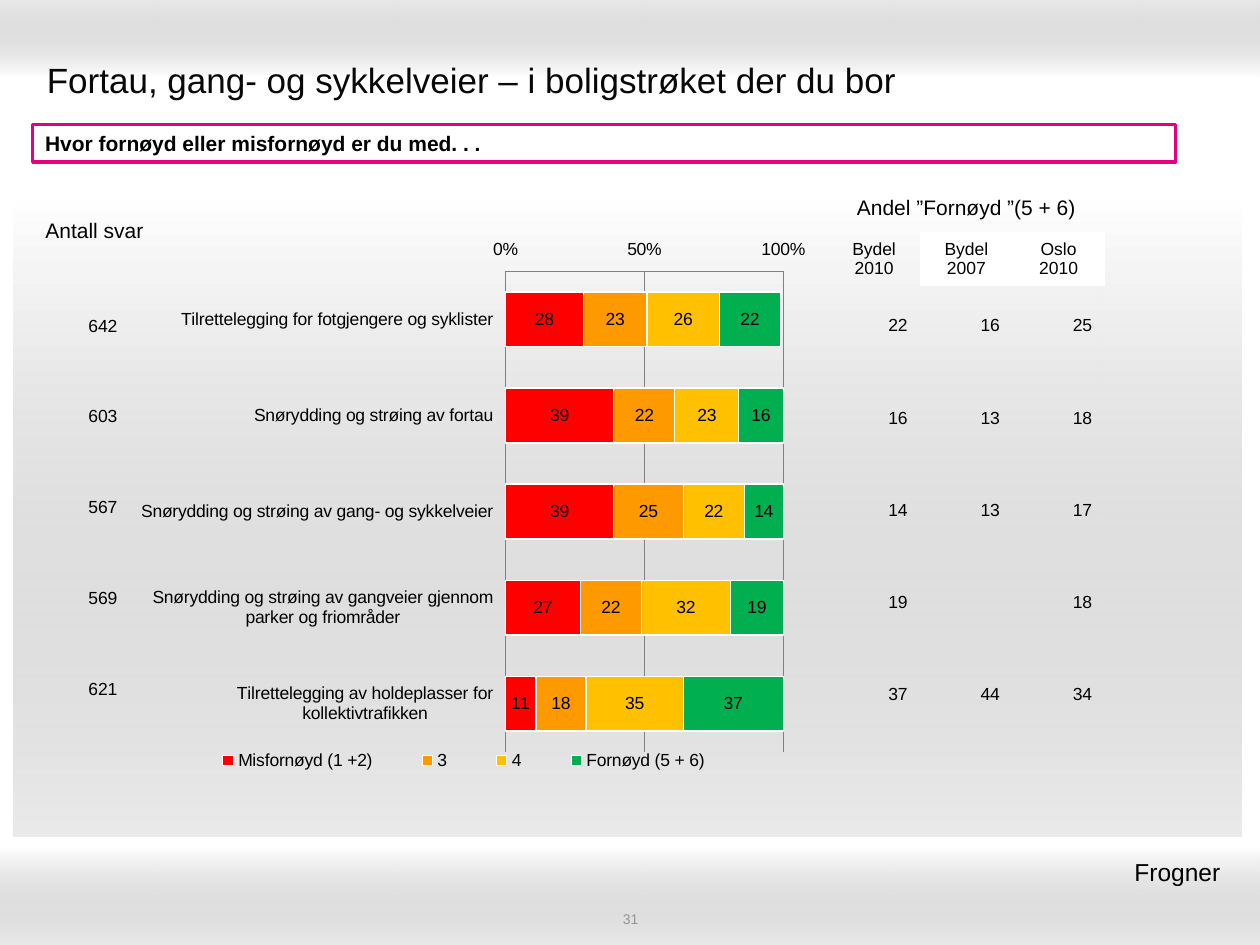
from dataclasses import dataclass

from lxml import etree
from pptx import Presentation
from pptx.chart.data import CategoryChartData
from pptx.dml.color import RGBColor
from pptx.enum.chart import XL_CHART_TYPE, XL_LEGEND_POSITION, XL_TICK_LABEL_POSITION, XL_TICK_MARK
from pptx.enum.shapes import MSO_SHAPE
from pptx.enum.text import MSO_ANCHOR, PP_ALIGN
from pptx.oxml.ns import qn
from pptx.util import Cm, Pt

RECT = MSO_SHAPE.RECTANGLE
LEFT, CENTER, RIGHT = PP_ALIGN.LEFT, PP_ALIGN.CENTER, PP_ALIGN.RIGHT
TOP, MIDDLE = MSO_ANCHOR.TOP, MSO_ANCHOR.MIDDLE
NO_TICKS, TICKS_INSIDE = XL_TICK_MARK.NONE, XL_TICK_MARK.INSIDE
LABELS_LOW = XL_TICK_LABEL_POSITION.LOW
BAR_STACKED = XL_CHART_TYPE.BAR_STACKED
LEGEND_BOTTOM = XL_LEGEND_POSITION.BOTTOM

FONT = "Arial"
PLAIN_TABLE_STYLE = "{2D5ABB26-0587-4C30-8999-92F81FD0307C}"
COLORS = {
    "white": "FFFFFF", "black": "000000", "title": "080808", "number": "969696",
    "band": "999999", "frame": "E7007E", "axis": "808080",
    "dissatisfied": "FF0000", "three": "FF9900", "four": "FFC000", "satisfied": "00B050",
}


@dataclass
class Box:
    left: float
    top: float
    width: float
    height: float

    def lengths(self) -> list:
        return [Cm(v) for v in (self.left, self.top, self.width, self.height)]


@dataclass
class Band:
    box: Box
    angle: int  # counter-clockwise


@dataclass
class Answer:
    name: str
    color: str
    values: tuple


@dataclass
class Grid:
    left: float
    top: float
    col_width: float
    row_heights: list
    rows: list
    align: PP_ALIGN
    size: int = 10


BANDS = [
    Band(Box(0, 0, 25.4, 1.57), 90),
    Band(Box(0, 17.07, 25.4, 1.98), 270),
    Band(Box(0.28, 3.96, 24.74, 12.9), 270),
]
TOPICS = [
    "Tilrettelegging for fotgjengere og syklister",
    "Snørydding og strøing av fortau",
    "Snørydding og strøing av gang- og sykkelveier",
    "Snørydding og strøing av gangveier gjennom parker og friområder",
    "Tilrettelegging av holdeplasser for kollektivtrafikken",
]
ANSWERS = [
    Answer("Misfornøyd (1 +2)", "dissatisfied", (28, 39, 39, 27, 11)),
    Answer("3", "three", (23, 22, 25, 22, 18)),
    Answer("4", "four", (26, 23, 22, 32, 35)),
    Answer("Fornøyd (5 + 6)", "satisfied", (22, 16, 14, 19, 37)),
]
SHARES = Grid(16.69, 5.64, 1.86, [1.86] * 5, [
    ["22", "16", "25"], ["16", "13", "18"], ["14", "13", "17"],
    ["19", "", "18"], ["37", "44", "34"]], RIGHT)
SHARE_HEADER = Grid(16.69, 3.73, 1.86, [0.94, 1.1], [
    ["Andel ”Fornøyd ”(5 + 6)", "", ""],
    ["Bydel\n2010", "Bydel\n2007", "Oslo\n2010"]], CENTER)
COUNTS = Grid(1.3, 5.66, 1.32, [1.83] * 5,
              [["642"], ["603"], ["567"], ["569"], ["621"]], RIGHT)
COUNT_HEADER = Grid(0.1, 3.91, 3.61, [1.5], [["Antall svar"]], CENTER, 12)


def rgb(name: str) -> RGBColor:
    return RGBColor.from_string(COLORS[name])


def style_font(font, size: int, color: str = "black", bold: bool = False) -> None:
    font.name, font.size, font.bold = FONT, Pt(size), bold
    font.color.rgb = rgb(color)


def write(frame, text: str, size: int, align=LEFT, anchor=MIDDLE,
          color: str = "black", bold: bool = False) -> None:
    frame.word_wrap = True
    frame.vertical_anchor = anchor
    for i, line in enumerate(text.split("\n")):
        paragraph = frame.add_paragraph() if i else frame.paragraphs[0]
        paragraph.alignment = align
        style_font(paragraph.font, size, color, bold)
        if line:
            run = paragraph.add_run()
            run.text = line
            style_font(run.font, size, color, bold)


def draw_band(slide, band: Band) -> None:
    shape = slide.shapes.add_shape(RECT, *band.box.lengths())
    shape.shadow.inherit = False
    shape.line.fill.background()
    shape.fill.gradient()
    shape.fill.gradient_angle = band.angle
    for stop, color in zip(shape.fill.gradient_stops, ("white", "band")):
        stop.color.rgb = rgb(color)
    end_color = list(shape._element.iter(qn("a:srgbClr")))[-1]
    etree.SubElement(end_color, qn("a:alpha"), val="20000")


def draw_table(slide, grid: Grid):
    columns = len(grid.rows[0])
    box = Box(grid.left, grid.top, grid.col_width * columns, sum(grid.row_heights))
    table = slide.shapes.add_table(len(grid.rows), columns, *box.lengths()).table
    table.first_row = table.horz_banding = False
    table._tbl.tblPr.find(qn("a:tableStyleId")).text = PLAIN_TABLE_STYLE
    for column in table.columns:
        column.width = Cm(grid.col_width)
    for r, (texts, height) in enumerate(zip(grid.rows, grid.row_heights)):
        table.rows[r].height = Cm(height)
        for c, text in enumerate(texts):
            cell = table.cell(r, c)
            cell.fill.background()
            # A heading above several columns is larger than its subheadings
            size = 12 if grid is SHARE_HEADER and r == 0 else grid.size
            write(cell.text_frame, text, size, grid.align)
            cell.vertical_anchor = MIDDLE
    return table


def set_layout(parent, index: int, inner: bool, fractions: tuple) -> None:
    for old in parent.findall(qn("c:layout")):
        parent.remove(old)
    layout = etree.Element(qn("c:layout"))
    manual = etree.SubElement(layout, qn("c:manualLayout"))
    settings = [("layoutTarget", "inner")] if inner else []
    settings += [("xMode", "edge"), ("yMode", "edge"), *zip("xywh", fractions)]
    for tag, value in settings:
        etree.SubElement(manual, qn(f"c:{tag}"), val=str(value))
    parent.insert(index, layout)


def draw_chart(slide, box: Box) -> None:
    data = CategoryChartData(number_format="0")
    data.categories = TOPICS
    for answer in ANSWERS:
        data.add_series(answer.name, answer.values)
    chart = slide.shapes.add_chart(BAR_STACKED, *box.lengths(), data).chart
    chart.has_title = False
    style_font(chart.font, 10)

    # Bars and their values
    plot = chart.plots[0]
    plot.gap_width, plot.overlap, plot.vary_by_categories = 75, 100, False
    for series, answer in zip(plot.series, ANSWERS):
        series.format.fill.solid()
        series.format.fill.fore_color.rgb = rgb(answer.color)
        series.format.line.color.rgb = rgb("white")
        series.format.line.width = Pt(0.75)
        labels = series.data_labels
        labels.show_value = True
        labels.number_format, labels.number_format_is_linked = "0", False
        style_font(labels.font, 10)

    # Axes
    topics, percent = chart.category_axis, chart.value_axis
    topics.reverse_order = True
    topics.major_tick_mark = NO_TICKS
    percent.major_tick_mark = TICKS_INSIDE
    percent.minimum_scale, percent.maximum_scale, percent.major_unit = 0, 100, 50
    percent.has_major_gridlines = True
    percent.major_gridlines.format.line.color.rgb = rgb("axis")
    percent.tick_labels.number_format = "General\\%"
    percent.tick_labels.number_format_is_linked = False
    for axis in (topics, percent):
        axis.minor_tick_mark = NO_TICKS
        axis.tick_label_position = LABELS_LOW
        axis.format.line.color.rgb = rgb("axis")
        style_font(axis.tick_labels.font, 10)

    # Legend and plot position
    chart.has_legend = True
    chart.legend.position = LEGEND_BOTTOM
    chart.legend.include_in_layout = False
    style_font(chart.legend.font, 10)
    set_layout(chart.legend._element, 1, False, (0.08, 0.91, 0.82, 0.05))
    set_layout(chart._chartSpace.chart.plotArea, 0, True, (0.55, 0.08, 0.4, 0.84))


def main() -> None:
    prs = Presentation()
    prs.slide_width, prs.slide_height = Cm(25.4), Cm(19.05)
    slide = prs.slides.add_slide(prs.slide_layouts[5])

    # Background bands, with the title in front of them
    for band in BANDS:
        draw_band(slide, band)
    title = slide.shapes.title
    slide.shapes._spTree.append(title._element)
    title.left, title.top, title.width, title.height = Box(0.69, 0.91, 24, 1.4).lengths()
    write(title.text_frame, "Fortau, gang- og sykkelveier – i boligstrøket der du bor",
          20, color="title")

    # Page number
    number = slide.shapes.add_textbox(*Box(8.69, 18.34, 8.05, 0.36).lengths()).text_frame
    number.margin_top = number.margin_bottom = 0
    write(number, "31", 8, CENTER, color="number")

    # Question
    question = slide.shapes.add_shape(RECT, *Box(0.66, 2.51, 23.04, 0.76).lengths())
    question.shadow.inherit = False
    question.fill.solid()
    question.fill.fore_color.rgb = rgb("white")
    question.line.color.rgb = rgb("frame")
    question.line.width = Pt(2)
    write(question.text_frame, "Hvor fornøyd eller misfornøyd er du med. . .", 12, bold=True)

    # Chart and the figures beside it
    draw_chart(slide, Box(2.49, 4.55, 14, 11.53))
    draw_table(slide, SHARES)
    header = draw_table(slide, SHARE_HEADER)
    header.cell(0, 0).merge(header.cell(0, 2))
    for column in (1, 2):
        fill = header.cell(1, column).fill
        fill.solid()
        fill.fore_color.rgb = rgb("white")
    draw_table(slide, COUNTS)
    draw_table(slide, COUNT_HEADER)

    # District
    district = slide.shapes.add_textbox(*Box(15.49, 17.15, 9.5, 1.45).lengths())
    write(district.text_frame, "Frogner ", 14, RIGHT, TOP)

    prs.save("out.pptx")


if __name__ == "__main__":
    main()
